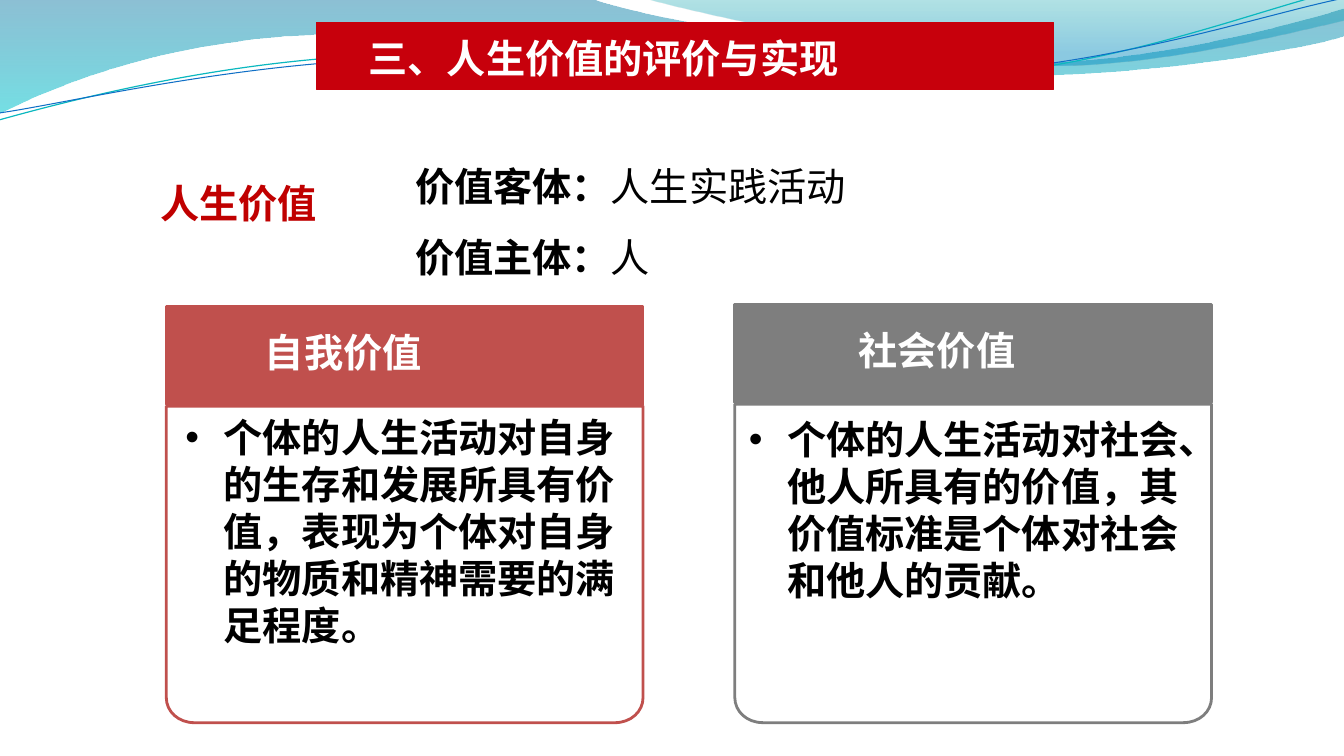
from lxml.etree import SubElement
from pptx import Presentation
from pptx.dml.color import RGBColor
from pptx.enum.shapes import MSO_SHAPE
from pptx.enum.text import MSO_AUTO_SIZE
from pptx.oxml.ns import qn
from pptx.util import Inches, Pt

FONT = "Noto Sans CJK SC"
RED, BRICK, GREY = "C7000C", "C0504D", "7E7E7E"
WHITE, BLACK = "FFFFFF", "000000"

# Each outline is a start point followed by segments: one point for a line, three for a curve.
LEFT_WAVE = [(0, 0), [(5.87, -0.01)],
             [(6.34, 0.17), (8.85, 0.63), (10.11, 0.63)],
             [(11.38, 0.63), (12.78, 0.26), (13.33, 0.09)], [(13.35, 0.36)],
             [(13.11, 0.44), (11.6, 0.76), (9.94, 0.75)],
             [(8.29, 0.75), (5.09, 0.28), (3.43, 0.34)],
             [(1.72, 0.36), (0.61, 0.83), (-0.01, 1.13)], [(0, 0)]]
RIGHT_WAVE = [(6.39, -0.01),
              [(6.79, 0.11), (9.09, 0.62), (10.25, 0.65)],
              [(11.41, 0.69), (12.82, 0.32), (13.33, 0.21)], [(13.33, 0)], [(6.39, -0.01)]]
TEAL_STRAND = [(-0.01, 1.19),
               [(0.64, 1.01), (2.11, 0.62), (3.69, 0.55)],
               [(5.27, 0.48), (7.9, 0.87), (9.5, 0.76)],
               [(11.1, 0.66), (12.52, 0.08), (13.31, -0.1)]]
BLUE_STRAND = [(0, 1.12),
               [(0.63, 1.03), (2.18, 0.66), (3.78, 0.59)],
               [(5.37, 0.53), (7.96, 0.82), (9.55, 0.72)],
               [(11.15, 0.62), (12.55, 0.14), (13.34, -0.02)]]


def color(value):
    return RGBColor.from_string(value)


def add_outline(page, outline, closed):
    """Build a freeform through the end points, then bend its curved segments."""
    start, *segments = outline
    builder = page.shapes.build_freeform(*map(Inches, start))
    builder.add_line_segments([tuple(map(Inches, segment[-1])) for segment in segments],
                              close=closed)
    shape = builder.convert_to_shape()
    shape.shadow.inherit = False
    lines = list(shape._element.spPr.iter(qn("a:lnTo")))
    for line, segment in zip(lines, segments):
        if len(segment) == 3:
            line.tag = qn("a:cubicBezTo")
            line.clear()
            for x, y in segment:
                SubElement(line, qn("a:pt"), x=str(Inches(x) - shape.left),
                           y=str(Inches(y) - shape.top))
    return shape


def set_opacity(shape, opacities):
    tints = shape._element.spPr.iter(qn("a:srgbClr"))
    for tint, opacity in zip(tints, opacities):
        SubElement(tint, qn("a:alpha"), val=str(opacity * 1000))


def add_wave(page, outline, stops):
    """Stops are (position, colour, opacity), from top to bottom."""
    wave = add_outline(page, outline, closed=True)
    wave.line.fill.background()
    wave.fill.gradient()
    wave.fill.gradient_angle = 270
    for stop, (position, value, _) in zip(wave.fill.gradient_stops, stops):
        stop.position = position
        stop.color.rgb = color(value)
    set_opacity(wave, [opacity for _, _, opacity in stops])


def set_line(shape, value, width):
    shape.line.color.rgb = color(value)
    shape.line.width = Pt(width)


def set_fill(shape, value):
    shape.fill.solid()
    shape.fill.fore_color.rgb = color(value)


def add_strand(page, outline, value, width):
    strand = add_outline(page, outline, closed=False)
    strand.fill.background()
    set_line(strand, value, width)


def add_bullet(para):
    properties = para._p.get_or_add_pPr()
    properties.set("marL", str(Inches(0.38)))
    properties.set("indent", str(Inches(-0.38)))
    SubElement(properties, qn("a:buFont"), typeface="Arial")
    SubElement(properties, qn("a:buChar"), char="•")


def add_text(page, place, paragraphs, value, wrap=True, spacing=None, bullet=False):
    """Each paragraph is a list of (text, bold) runs."""
    box = page.shapes.add_textbox(*map(Inches, place))
    frame = box.text_frame
    frame.word_wrap = wrap
    frame.auto_size = MSO_AUTO_SIZE.SHAPE_TO_FIT_TEXT
    for index, runs in enumerate(paragraphs):
        para = frame.add_paragraph() if index else frame.paragraphs[0]
        if spacing:
            para.line_spacing = spacing
        if bullet:
            add_bullet(para)
        for text, bold in runs:
            span = para.add_run()
            span.text = text
            span.font.size = Pt(28)
            span.font.bold = bold
            span.font.name = FONT
            span.font.color.rgb = color(value)
            SubElement(span.font._element, qn("a:ea"), typeface=FONT)


def add_title(page, text):
    bar = page.shapes.add_shape(MSO_SHAPE.RECTANGLE, *map(Inches, (3.14, 0.22, 7.31, 0.67)))
    bar.shadow.inherit = False
    set_fill(bar, RED)
    set_line(bar, RED, 0.75)
    add_text(page, (3.56, 0.29, 7.17, 0.57), [[(text, True)]], WHITE)


def add_card(page, left, top, value, label, label_left, body, body_place):
    right, head_bottom = left + 4.73, top + 0.97
    body_top, bottom = top + 0.99, 7.17
    frame = add_outline(page, [
        (left, body_top), [(right, body_top)], [(right, bottom - 0.25)],
        [(right, bottom - 0.11), (right - 0.12, bottom), (right - 0.28, bottom)],
        [(left + 0.28, bottom)],
        [(left + 0.12, bottom), (left, bottom - 0.11), (left, bottom - 0.25)],
        [(left, body_top)]], closed=True)
    set_fill(frame, WHITE)
    set_opacity(frame, [90])
    head = add_outline(page, [(left, top), [(right, top)], [(right, head_bottom)],
                              [(left, head_bottom)], [(left, top)]], closed=True)
    set_fill(head, value)
    for part in (frame, head):
        set_line(part, value, 2)
    add_text(page, (label_left, top + 0.17, 1.78, 0.57), [[(label, True)]], WHITE, wrap=False)
    add_text(page, body_place, [[(body, True)]], BLACK, bullet=True)


def main():
    deck = Presentation()
    deck.slide_width, deck.slide_height = Inches(40 / 3), Inches(7.5)
    page = deck.slides.add_slide(deck.slide_layouts[6])

    add_wave(page, LEFT_WAVE, [(0, "0074A1", 45), (1, "00C6CF", 55)])
    add_wave(page, RIGHT_WAVE, [(0, "00A1A9", 30), (0.8, "008BBF", 45)])
    add_strand(page, TEAL_STRAND, "0AB8BF", 0.85)
    add_strand(page, BLUE_STRAND, "0F6FC6", 0.75)

    add_text(page, (4.02, 1.33, 7.85, 1.51),
             [[("价值客体：", True), ("人生实践活动", False)],
              [("价值主体：", True), ("人", False)]], BLACK, spacing=1.5)
    add_text(page, (1.49, 1.5, 1.78, 0.81), [[("人生价值", True)]], "C00000",
             wrap=False, spacing=1.5)
    add_title(page, "三、人生价值的评价与实现")

    add_card(page, 1.65, 3.04, BRICK, "自我价值", 2.53,
             "个体的人生活动对自身的生存和发展所具有价值，表现为个体对自身的物质和精神需要的满足程度。",
             (1.74, 4.05, 4.56, 3.16))
    add_card(page, 7.29, 3.02, GREY, "社会价值", 8.42,
             "个体的人生活动对社会、他人所具有的价值，其价值标准是个体对社会和他人的贡献。",
             (7.33, 4.07, 4.49, 2.46))
    deck.save("out.pptx")


if __name__ == "__main__":
    main()
